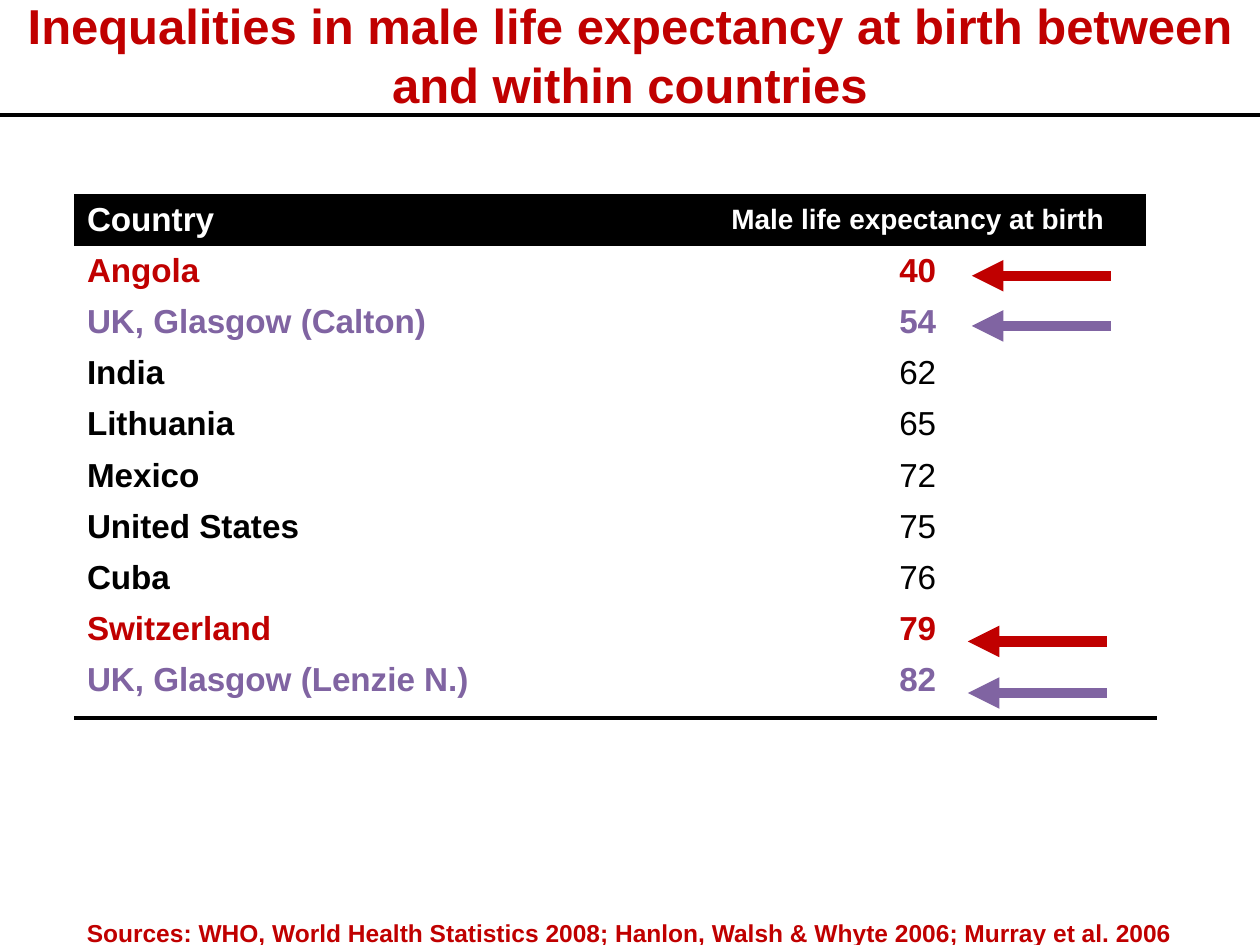
from dataclasses import dataclass

from lxml import etree
from pptx import Presentation
from pptx.dml.color import RGBColor
from pptx.enum import shapes, text
from pptx.oxml import ns
from pptx.util import Cm, Pt


@dataclass(frozen=True)
class Theme:
    font: str = "Arial"
    red: str = "C00000"
    purple: str = "8064A2"
    black: str = "000000"
    white: str = "FFFFFF"
    title: float = 28
    body: float = 19
    column: float = 16
    source: float = 14
    rule: float = 2.25
    arrow: float = 6


THEME = Theme()
PLAIN_TABLE = "{2D5ABB26-0587-4C30-8999-92F81FD0307C}"
LEFT = 1.5
ROW_HEIGHT = 1.03
ROWS = [
    ("Angola", 40, THEME.red),
    ("UK, Glasgow (Calton)", 54, THEME.purple),
    ("India", 62, THEME.black),
    ("Lithuania", 65, THEME.black),
    ("Mexico", 72, THEME.black),
    ("United States", 75, THEME.black),
    ("Cuba", 76, THEME.black),
    ("Switzerland", 79, THEME.red),
    ("UK, Glasgow (Lenzie N.)", 82, THEME.purple),
]
ARROWS = [
    (22.39, 5.56, THEME.red),
    (22.39, 6.57, THEME.purple),
    (22.31, 12.93, THEME.red),
    (22.31, 13.97, THEME.purple),
]


def write(tf, words, size=THEME.body, color=THEME.black, bold=True, center=False):
    p = tf.paragraphs[0]
    p.alignment = text.PP_ALIGN.CENTER if center else text.PP_ALIGN.LEFT
    r = p.add_run()
    r.text = words
    r.font.name = THEME.font
    r.font.size = Pt(size)
    r.font.bold = bold
    r.font.color.rgb = RGBColor.from_string(color)


def add_text(s, left, top, width, height, words, anchor=text.MSO_ANCHOR.TOP, **fmt):
    tf = s.shapes.add_textbox(Cm(left), Cm(top), Cm(width), Cm(height)).text_frame
    tf.word_wrap = True
    tf.vertical_anchor = anchor
    write(tf, words, **fmt)


def add_line(s, x1, x2, y, color=THEME.black, width=THEME.rule, arrow=False):
    line = s.shapes.add_connector(
        shapes.MSO_CONNECTOR.STRAIGHT, Cm(x1), Cm(y), Cm(x2), Cm(y))
    line.line.color.rgb = RGBColor.from_string(color)
    line.line.width = Pt(width)
    props = line._element.spPr
    if arrow:
        etree.SubElement(props.find(ns.qn("a:ln")), ns.qn("a:tailEnd"), type="triangle")
    etree.SubElement(props, ns.qn("a:effectLst"))


def fill_cell(cell, words, fill=THEME.white, **fmt):
    cell.fill.solid()
    cell.fill.fore_color.rgb = RGBColor.from_string(fill)
    cell.vertical_anchor = text.MSO_ANCHOR.MIDDLE
    write(cell.text_frame, words, **fmt)


def add_country_table(s):
    widths = (12.4, 9.2)
    count = len(ROWS) + 1
    frame = s.shapes.add_table(
        count, 2, Cm(LEFT), Cm(3.92), Cm(sum(widths)), Cm(ROW_HEIGHT * count))
    table = frame.table
    frame._element.find(".//" + ns.qn("a:tableStyleId")).text = PLAIN_TABLE
    for column, width in zip(table.columns, widths):
        column.width = Cm(width)
    for row in table.rows:
        row.height = Cm(ROW_HEIGHT)
    header = {"fill": THEME.black, "color": THEME.white}
    fill_cell(table.cell(0, 0), "Country", **header)
    fill_cell(table.cell(0, 1), "Male life expectancy at birth",
              size=THEME.column, center=True, **header)
    for i, (country, years, color) in enumerate(ROWS, 1):
        fill_cell(table.cell(i, 0), country, color=color)
        fill_cell(table.cell(i, 1), str(years), color=color,
                  bold=color != THEME.black, center=True)


def main():
    prs = Presentation()
    prs.slide_width, prs.slide_height = Cm(25.4), Cm(19.05)
    s = prs.slides.add_slide(prs.slide_layouts[6])
    add_country_table(s)
    add_line(s, LEFT, 23.32, 14.48)
    add_text(s, 0, 0.01, 25.4, 2.16,
             "Inequalities in male life expectancy at birth between and within countries",
             anchor=text.MSO_ANCHOR.MIDDLE, size=THEME.title, color=THEME.red, center=True)
    add_line(s, 0, 25.4, 2.32)
    for right, y, color in ARROWS:
        add_line(s, right, right - 2.8, y, color, THEME.arrow, arrow=True)
    add_text(s, LEFT, 18.38, 22.91, 0.86,
             "Sources: WHO, World Health Statistics 2008; Hanlon, Walsh & Whyte 2006; "
             "Murray et al. 2006", size=THEME.source, color=THEME.red)
    prs.save("out.pptx")


if __name__ == "__main__":
    main()
